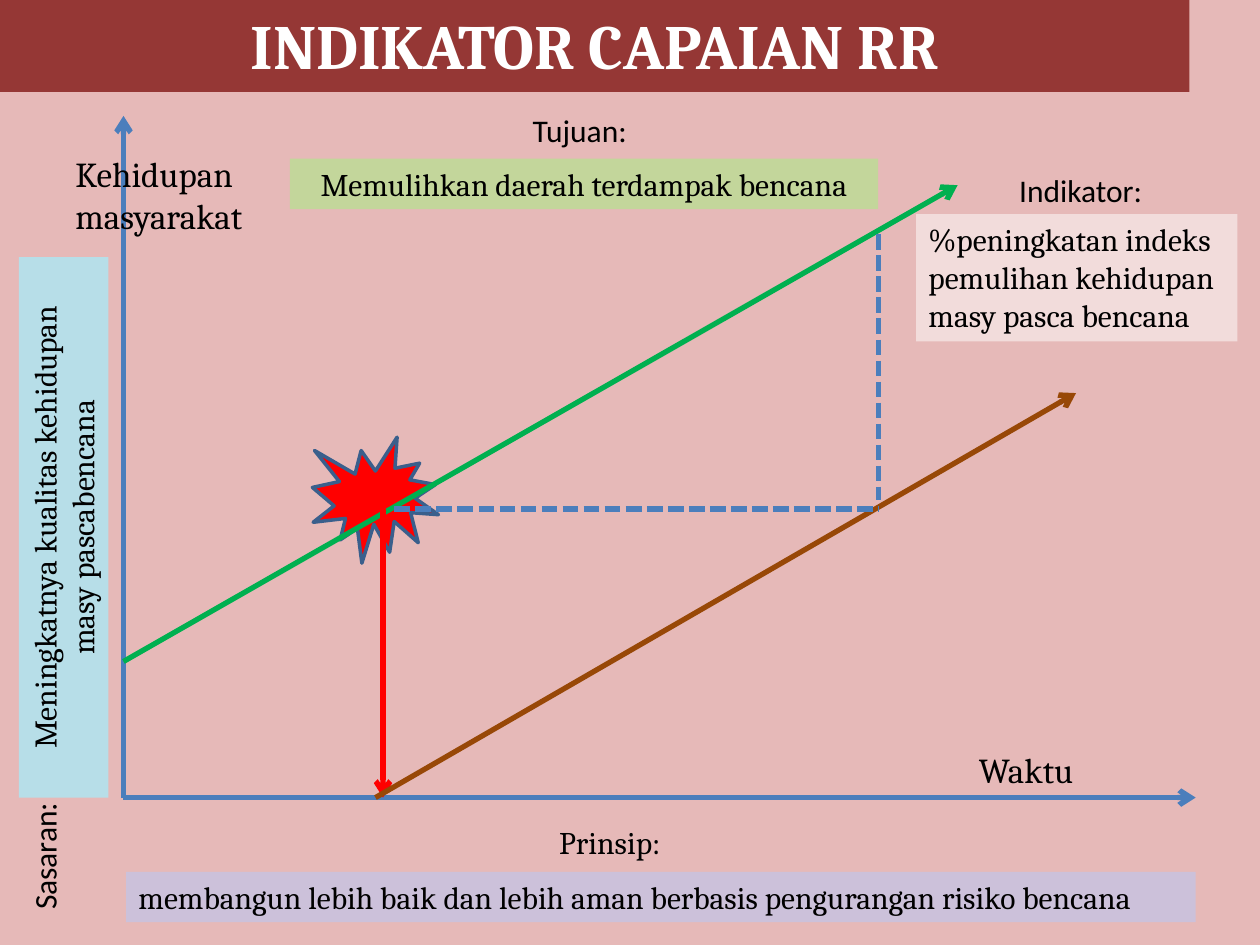
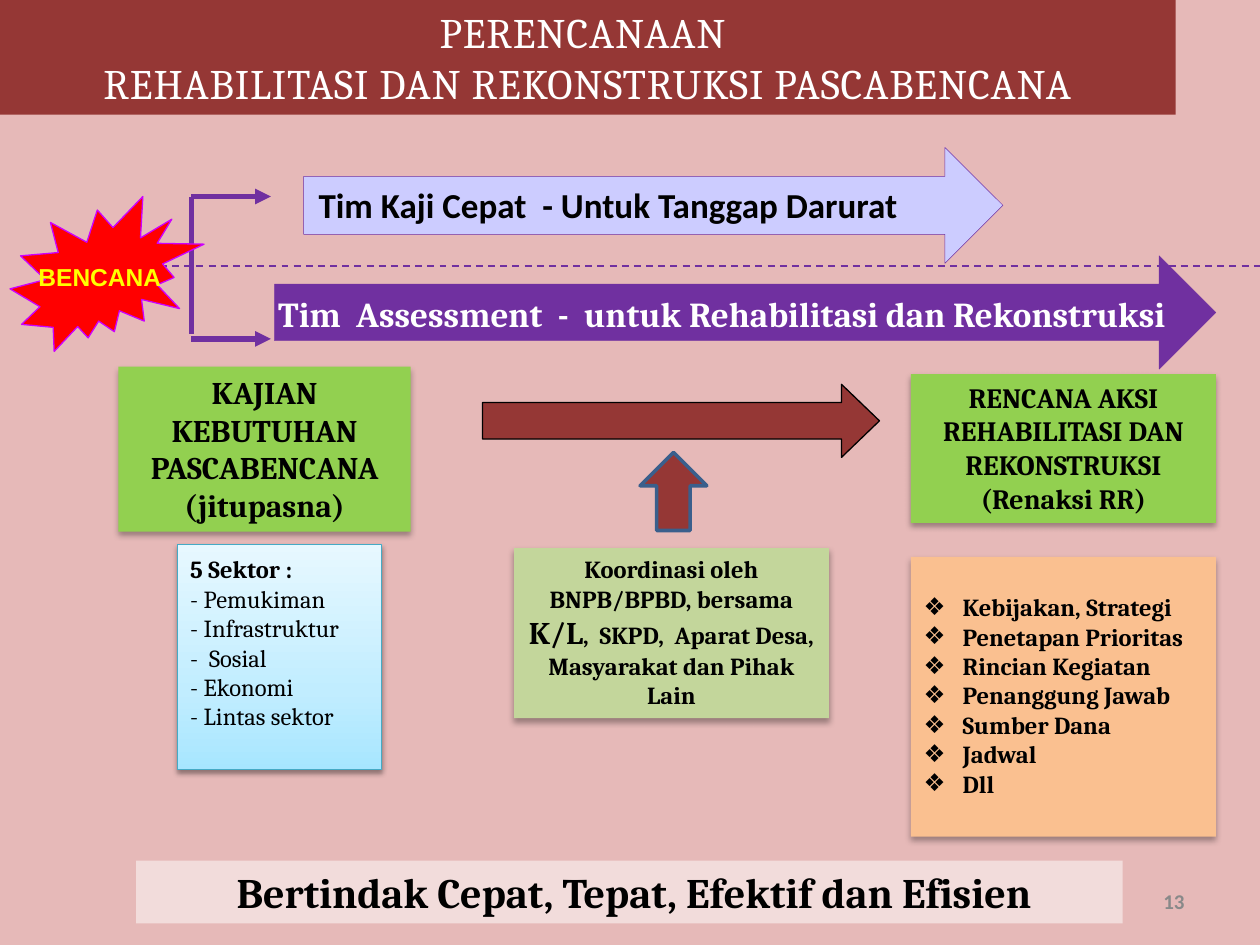
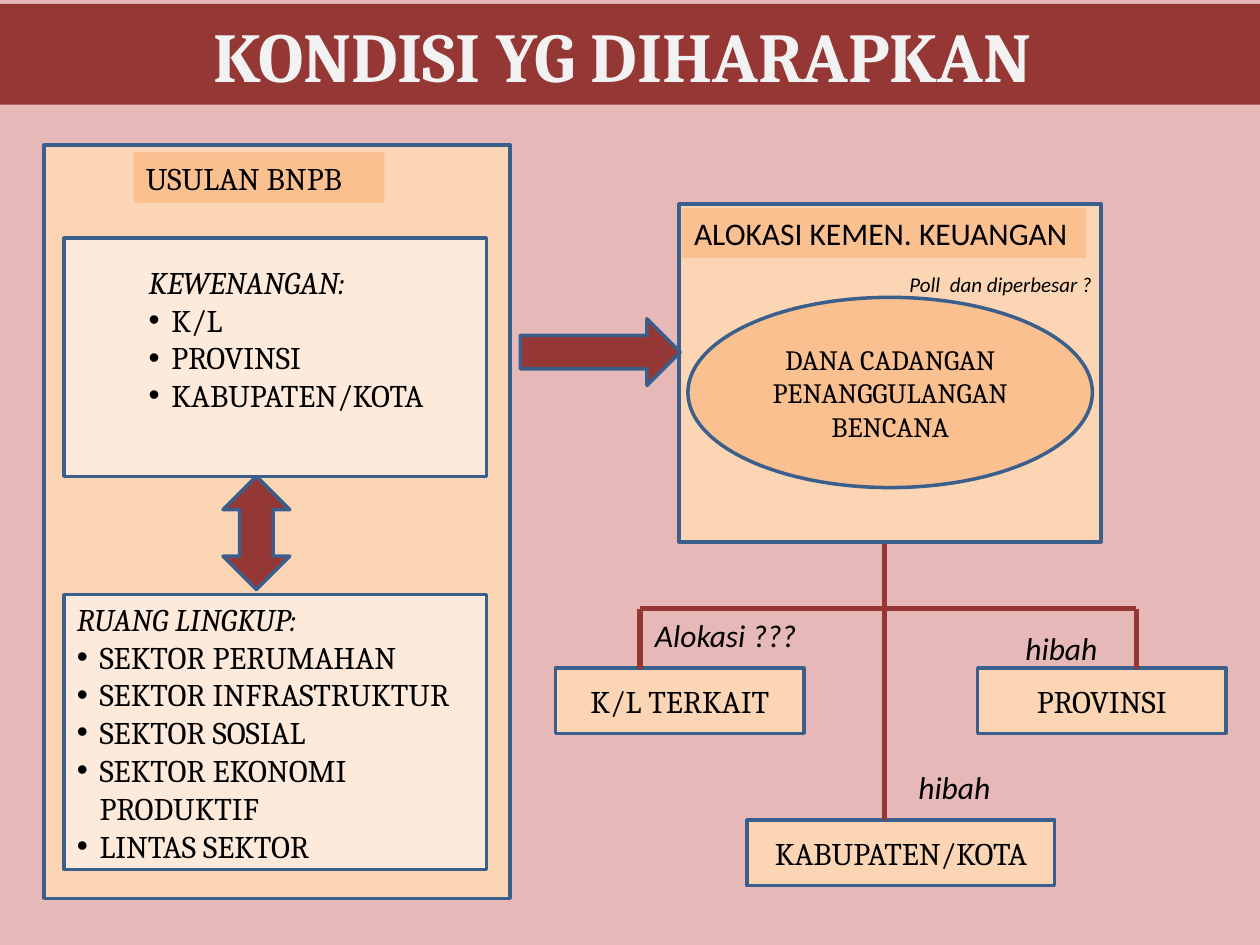
from copy import deepcopy

from lxml import etree
from pptx import Presentation
from pptx.dml.color import RGBColor
from pptx.enum.dml import MSO_LINE
from pptx.enum.shapes import MSO_CONNECTOR, MSO_SHAPE
from pptx.enum.text import MSO_ANCHOR, MSO_AUTO_SIZE, PP_ALIGN
from pptx.oxml.ns import qn
from pptx.util import Inches, Pt

# Enum members
RECT, OVAL = MSO_SHAPE.RECTANGLE, MSO_SHAPE.OVAL
RIGHT_ARROW, UP_ARROW = MSO_SHAPE.RIGHT_ARROW, MSO_SHAPE.UP_ARROW
UP_DOWN_ARROW = MSO_SHAPE.UP_DOWN_ARROW
BURST_SMALL, BURST_LARGE = MSO_SHAPE.EXPLOSION1, MSO_SHAPE.EXPLOSION2
STRAIGHT = MSO_CONNECTOR.STRAIGHT
SHORT_DASH, DASH = MSO_LINE.SQUARE_DOT, MSO_LINE.DASH
LEFT, CENTER, RIGHT = PP_ALIGN.LEFT, PP_ALIGN.CENTER, PP_ALIGN.RIGHT
TOP, MIDDLE = MSO_ANCHOR.TOP, MSO_ANCHOR.MIDDLE

# Colours
PINK = RGBColor(0xE6, 0xB9, 0xB8)
MAROON = RGBColor(0x95, 0x37, 0x35)
WHITE = RGBColor(0xFF, 0xFF, 0xFF)
OFF_WHITE = RGBColor(0xF2, 0xF2, 0xF2)
BLACK = RGBColor(0, 0, 0)
GRAY = RGBColor(0x89, 0x89, 0x89)
RED = RGBColor(0xFF, 0, 0)
YELLOW = RGBColor(0xFF, 0xFF, 0)
MAGENTA = RGBColor(0xCC, 0, 0xFF)
GREEN = RGBColor(0, 0xB0, 0x50)
LIME = RGBColor(0x92, 0xD0, 0x50)
SAGE = RGBColor(0xC3, 0xD6, 0x9B)
BROWN = RGBColor(0x98, 0x48, 0x07)
PURPLE = RGBColor(0x70, 0x30, 0xA0)
LAVENDER = RGBColor(0xCC, 0xCC, 0xFF)
LILAC = RGBColor(0xCC, 0xC1, 0xDA)
ROSE = RGBColor(0xF2, 0xDC, 0xDB)
AQUA = RGBColor(0xB7, 0xDE, 0xE8)
TEAL = RGBColor(0x46, 0xAA, 0xC5)
AXIS_BLUE = RGBColor(0x4B, 0x7E, 0xBC)
OUTLINE_BLUE = RGBColor(0x3A, 0x5F, 0x8C)
ORANGE = RGBColor(0xFA, 0xC0, 0x90)
PEACH = RGBColor(0xFC, 0xD5, 0xB5)
CREAM = RGBColor(0xFD, 0xEA, 0xDA)
SKY_STOPS = [(0, RGBColor(0xA7, 0xE6, 0xFF)), (0.35, RGBColor(0xC1, 0xED, 0xFF)),
             (1, RGBColor(0xE7, 0xF8, 0xFF))]

OUTLINE = (OUTLINE_BLUE, 2)
SOFT_SHADOW = (32, 3.5, 2.2)  # opacity %, blur pt, distance pt
BASE_FORMAT = {"name": "Cambria", "size": 18, "bold": False, "italic": False}
TITLE_ONLY, TWO_CONTENT = 5, 3


# Text
def set_font(run, color=BLACK, **formats):
    for attribute, value in {**BASE_FORMAT, **formats}.items():
        setattr(run.font, attribute, Pt(value) if attribute == "size" else value)
    run.font.color.rgb = color


def set_frame(shape, anchor=TOP, wrap=True, insets=(0.1, 0.05, 0.1, 0.05)):
    left, top, right, bottom = map(Inches, insets)
    settings = {"auto_size": MSO_AUTO_SIZE.NONE, "word_wrap": wrap,
                "vertical_anchor": anchor, "margin_left": left, "margin_top": top,
                "margin_right": right, "margin_bottom": bottom}
    for attribute, value in settings.items():
        setattr(shape.text_frame, attribute, value)


def write(shape, paragraphs, align=LEFT, **formats):
    """Each paragraph is a string or a list of (text, format changes)."""
    if isinstance(paragraphs, str):
        paragraphs = [paragraphs]
    frame = shape.text_frame
    for number, content in enumerate(paragraphs):
        paragraph = frame.add_paragraph() if number else frame.paragraphs[0]
        paragraph.alignment = align
        paragraph.space_before = Pt(0)
        runs = [(content, {})] if isinstance(content, str) else content
        for text, changes in runs:
            run = paragraph.add_run()
            run.text = text
            set_font(run, **{**formats, **changes})


def set_bullet(paragraph, character, margin, hanging):
    properties = paragraph._p.get_or_add_pPr()
    properties.set("marL", str(Inches(margin)))
    properties.set("indent", str(-Inches(hanging)))
    if character:
        etree.SubElement(properties, qn("a:buChar")).set("char", character)
    else:
        etree.SubElement(properties, qn("a:buNone"))


# Surface
def paint(shape, fill, line=None, shadow=None):
    if isinstance(fill, list):
        paint_gradient(shape, fill)
    else:
        shape.fill.solid()
        shape.fill.fore_color.rgb = fill
    if line:
        shape.line.color.rgb, shape.line.width = line[0], Pt(line[1])
    else:
        shape.line.fill.background()
    shape.shadow.inherit = False
    if shadow:
        add_shadow(shape, *shadow)


def paint_gradient(shape, stops):
    shape.fill.gradient()
    shape.fill.gradient_angle = 90
    stop_list = shape._element.spPr.find(".//" + qn("a:gsLst"))
    while len(stop_list) < len(stops):
        stop_list.append(deepcopy(stop_list[0]))
    for stop, (position, color) in zip(shape.fill.gradient_stops, stops):
        stop.position = position
        stop.color.rgb = color


def add_shadow(shape, opacity, blur, distance):
    effects = shape._element.spPr.find(qn("a:effectLst"))
    outer = etree.SubElement(effects, qn("a:outerShdw"), blurRad=str(Pt(blur)),
                             dist=str(Pt(distance)), dir="5400000", rotWithShape="0")
    color = etree.SubElement(outer, qn("a:srgbClr"), val="000000")
    etree.SubElement(color, qn("a:alpha"), val=str(opacity * 1000))


# Elements
def place(shape, at):
    for attribute, value in zip(("left", "top", "width", "height"), at):
        setattr(shape, attribute, Inches(value))


def add_box(slide, at, fill, text=None, kind=RECT, line=None, shadow=None,
            anchor=TOP, wrap=True, rotation=0, align=CENTER, **formats):
    box = slide.shapes.add_shape(kind, *map(Inches, at))
    box.rotation = rotation
    paint(box, fill, line, shadow)
    if text:
        set_frame(box, anchor, wrap)
        write(box, text, align, **formats)
    return box


def add_label(slide, at, text, wrap=True, anchor=TOP, rotation=0, align=LEFT, **formats):
    label = slide.shapes.add_textbox(*map(Inches, at))
    label.rotation = rotation
    set_frame(label, anchor, wrap)
    write(label, text, align, **formats)


def add_line(slide, start, end, color, width=3, dash=None, head=None):
    line = slide.shapes.add_connector(STRAIGHT, *map(Inches, start + end))
    line.line.color.rgb, line.line.width = color, Pt(width)
    if dash:
        line.line.dash_style = dash
    if head:
        etree.SubElement(line.line._get_or_add_ln(), qn("a:tailEnd"), type=head)
    etree.SubElement(line._element.spPr, qn("a:effectLst"))


def fill_list(slide, index, at, fill, items, heading=None, bullet=None, margin=0,
              hanging=0, line=None, shadow=None, anchor=MIDDLE,
              insets=(0.1, 0.05, 0.1, 0.05), **formats):
    body = slide.placeholders[index]
    body._element.getparent().append(body._element)  # bring to front
    place(body, at)
    paint(body, fill, line, shadow)
    set_frame(body, anchor, insets=insets)
    write(body, ([[heading]] if heading else []) + items, **formats)
    for number, paragraph in enumerate(body.text_frame.paragraphs):
        if heading and number == 0:
            set_bullet(paragraph, None, margin - hanging, 0)
        else:
            set_bullet(paragraph, bullet, margin, hanging)


def add_slide(deck, layout, band, title, spacing=None, **formats):
    slide = deck.slides.add_slide(deck.slide_layouts[layout])
    slide.background.fill.solid()
    slide.background.fill.fore_color.rgb = PINK
    place(slide.shapes.title, band)
    paint(slide.shapes.title, MAROON)
    set_frame(slide.shapes.title, MIDDLE)
    write(slide.shapes.title, title, CENTER, **formats)
    if spacing:
        for paragraph in slide.shapes.title.text_frame.paragraphs:
            for run in paragraph.runs:
                run.font._element.set("spc", str(spacing))
    return slide


# Slides
def build_indicators(deck):
    slide = add_slide(deck, TITLE_ONLY, (0, -0.03, 9.44, 0.76), "INDIKATOR CAPAIAN RR",
                      size=36, bold=True, color=WHITE)
    add_box(slide, (2.48, 3.47, 1, 1), RED, kind=BURST_SMALL, line=OUTLINE)

    # Axes, trends and the gap between them
    origin = (0.98, 6.33)
    for start, end, color in [
        (origin, (0.98, 0.92), AXIS_BLUE),
        (origin, (9.49, 6.33), AXIS_BLUE),
        ((0.98, 5.25), (7.6, 1.47), GREEN),
        ((3.04, 4.04), (3.04, 6.33), RED),
        ((2.98, 6.33), (8.54, 3.12), BROWN),
    ]:
        add_line(slide, start, end, color, head="arrow")
    add_line(slide, (3.13, 4.04), (6.97, 4.04), AXIS_BLUE, dash=SHORT_DASH)
    add_line(slide, (6.97, 1.86), (6.97, 3.97), AXIS_BLUE, dash=SHORT_DASH)
    add_label(slide, (0.5, 1.16, 1.94, 0.77), ["Kehidupan", "masyarakat"], size=20)
    add_label(slide, (7.67, 5.89, 1.25, 0.44), "Waktu", size=20)

    # Statements and their headings
    add_box(slide, (2.3, 1.26, 4.67, 0.4), SAGE, "Memulihkan daerah terdampak bencana")
    add_box(slide, (-1.64, 3.83, 4.29, 0.71), AQUA,
            "Meningkatnya kualitas kehidupan masy pascabencana", rotation=270)
    add_box(slide, (7.27, 1.7, 2.55, 1.01), ROSE,
            "%peningkatan indeks pemulihan kehidupan masy pasca bencana", align=LEFT)
    add_box(slide, (1, 6.92, 8.49, 0.4), LILAC,
            "membangun lebih baik dan lebih aman berbasis pengurangan risiko bencana",
            align=LEFT)
    for at, heading, font, rotation in [
        ((7.99, 1.31, 1.18, 0.4), "Indikator:", "Calibri", 0),
        ((-0.18, 6.59, 1.06, 0.4), "Sasaran:", "Calibri", 270),
        ((4.13, 0.83, 0.96, 0.4), "Tujuan:", "Calibri", 0),
        ((4.34, 6.48, 1.04, 0.4), "Prinsip:", "Cambria", 0),
    ]:
        add_label(slide, at, heading, wrap=False, rotation=rotation, name=font)


def build_planning(deck):
    slide = add_slide(deck, TWO_CONTENT, (0, 0, 9.33, 0.91),
                      ["PERENCANAAN ", "REHABILITASI DAN REKONSTRUKSI PASCABENCANA"],
                      spacing=50, size=24, color=WHITE)

    # Two teams that follow the disaster
    team_line = (PURPLE, 0.25)
    add_box(slide, (2.41, 1.17, 5.55, 0.92), LAVENDER, kind=RIGHT_ARROW, line=team_line)
    add_box(slide, (2.18, 2.03, 7.47, 0.9), PURPLE, kind=RIGHT_ARROW, line=team_line)
    add_line(slide, (1.27, 2.11), (10, 2.11), PURPLE, 1, DASH)
    add_label(slide, (2.43, 1.41, 6.08, 0.44), "Tim Kaji Cepat  - Untuk Tanggap Darurat",
              name="Calibri", size=20, bold=True)
    add_label(slide, (2.11, 2.27, 7.8, 0.44),
              "Tim  Assessment  -  untuk Rehabilitasi dan Rekonstruksi",
              size=20, bold=True, color=WHITE)
    for y in (1.56, 2.69):
        add_line(slide, (1.52, y), (2.15, y), PURPLE, head="triangle")
    add_line(slide, (1.52, 2.65), (1.52, 1.56), PURPLE)
    add_box(slide, (0.08, 1.56, 1.54, 1.23), RED, "BENCANA", BURST_LARGE,
            line=(MAGENTA, 0.75), anchor=MIDDLE, wrap=False,
            name="Arial", size=14, bold=True, color=YELLOW)

    # From assessment to action plan
    add_box(slide, (0.94, 2.91, 2.32, 1.31), LIME,
            ["KAJIAN KEBUTUHAN PASCABENCANA", "(jitupasna)"],
            shadow=SOFT_SHADOW, bold=True)
    add_box(slide, (7.23, 2.97, 2.42, 1.18), LIME,
            ["RENCANA AKSI REHABILITASI DAN REKONSTRUKSI", "(Renaksi RR)"],
            shadow=SOFT_SHADOW, size=16, bold=True)
    to_plan = add_box(slide, (3.83, 3.05, 3.15, 0.58), MAROON, kind=RIGHT_ARROW,
                      line=(BLACK, 0.75))
    to_plan.adjustments[1] = 0.52
    add_box(slide, (4.08, 4.35, 2.5, 1.35), SAGE,
            [[("Koordinasi oleh BNPB/BPBD, bersama ", {}), ("K/L", {"size": 18}),
              (",  SKPD,  Aparat Desa,  Masyarakat dan Pihak  Lain", {})]],
            shadow=SOFT_SHADOW, size=14, bold=True)
    add_box(slide, (5.08, 3.59, 0.53, 0.62), MAROON, kind=UP_ARROW, line=OUTLINE)

    # Sectors and plan contents
    fill_list(slide, 1, (1.41, 4.32, 1.62, 1.79), SKY_STOPS,
              ["- Pemukiman", "- Infrastruktur", "-  Sosial", "- Ekonomi",
               "- Lintas sektor"],
              heading=("5 Sektor :", {"bold": True}), line=(TEAL, 0.75),
              shadow=(38, 3.1, 1.6), insets=(0.1, 0.05, 0.1, 0.28), size=14)
    fill_list(slide, 2, (7.23, 4.42, 2.42, 2.22), ORANGE,
              ["Kebijakan, Strategi", "Penetapan Prioritas", "Rincian Kegiatan",
               "Penanggung Jawab", "Sumber Dana", "Jadwal", "Dll"],
              bullet="❖", margin=0.31, hanging=0.31, shadow=SOFT_SHADOW, anchor=TOP,
              insets=(0.1, 0.28, 0.1, 0.05), size=14, bold=True)

    # Motto and page number
    add_label(slide, (7.17, 6.95, 2.33, 0.4), "13", anchor=MIDDLE, align=RIGHT,
              name="Calibri", size=12, bold=True, color=GRAY)
    add_box(slide, (1.08, 6.83, 7.83, 0.5), ROSE,
            " Bertindak Cepat, Tepat, Efektif dan Efisien", size=24, bold=True)


def build_expected(deck):
    slide = add_slide(deck, TWO_CONTENT, (0, 0.03, 10, 0.8), "KONDISI YG DIHARAPKAN ",
                      size=40, bold=True, color=OFF_WHITE)

    # Proposal
    add_box(slide, (0.35, 1.15, 3.7, 5.98), PEACH, line=OUTLINE)
    add_box(slide, (1.06, 1.21, 1.99, 0.4), ORANGE, "USULAN BNPB", align=LEFT)
    fill_list(slide, 1, (0.51, 1.89, 3.35, 1.89), CREAM,
              ["K/L", "PROVINSI", "KABUPATEN/KOTA"],
              heading=("KEWENANGAN:", {"italic": True}), bullet="•", margin=0.75,
              hanging=0.18, line=OUTLINE, insets=(0.1, 0.05, 0.1, 0.35))
    fill_list(slide, 2, (0.51, 4.72, 3.35, 2.18), CREAM,
              ["SEKTOR PERUMAHAN", "SEKTOR INFRASTRUKTUR", "SEKTOR SOSIAL",
               "SEKTOR EKONOMI PRODUKTIF", "LINTAS SEKTOR"],
              heading=("RUANG LINGKUP:", {"italic": True}), bullet="•", margin=0.18,
              hanging=0.18, line=OUTLINE)
    add_box(slide, (1.77, 3.78, 0.53, 0.9), MAROON, kind=UP_DOWN_ARROW, line=OUTLINE)

    # Allocation
    add_box(slide, (5.39, 1.62, 3.35, 2.68), PEACH, line=OUTLINE)
    add_box(slide, (5.41, 1.65, 3.21, 0.4), ORANGE, "ALOKASI KEMEN. KEUANGAN",
            align=LEFT, name="Calibri")
    add_box(slide, (5.46, 2.36, 3.21, 1.51), ORANGE,
            "DANA CADANGAN PENANGGULANGAN BENCANA", OVAL, OUTLINE, anchor=MIDDLE, size=16)
    add_box(slide, (4.13, 2.53, 1.27, 0.53), MAROON, kind=RIGHT_ARROW, line=OUTLINE)

    # Recipients and branches
    for at, recipient in [((4.41, 5.3, 1.97, 0.52), "K/L TERKAIT"),
                          ((7.76, 5.3, 1.97, 0.52), "PROVINSI"),
                          ((5.93, 6.51, 2.44, 0.52), "KABUPATEN/KOTA")]:
        add_box(slide, at, PEACH, recipient, line=OUTLINE, anchor=MIDDLE)
    branch_y = 4.83
    add_line(slide, (5.08, branch_y), (9.02, branch_y), MAROON)
    for x, top, bottom in [(5.08, branch_y, 5.31), (9.02, branch_y, 5.31),
                           (7.02, 4.32, 6.51)]:
        add_line(slide, (x, top), (x, bottom), MAROON)

    # Remarks
    for at, remark, size in [((7.12, 2.11, 1.66, 0.3), "Poll  dan diperbesar ?", 12),
                             ((7.19, 6.05, 0.92, 0.4), "hibah", 18),
                             ((8.04, 4.94, 0.92, 0.4), "hibah", 18),
                             ((5.1, 4.84, 1.34, 0.4), "Alokasi ???", 18)]:
        add_label(slide, at, remark, wrap=size > 12, name="Calibri", size=size, italic=True)


def main():
    deck = Presentation()
    deck.slide_width, deck.slide_height = Inches(10), Inches(7.5)
    build_indicators(deck)
    build_planning(deck)
    build_expected(deck)
    deck.save("out.pptx")


if __name__ == "__main__":
    main()
